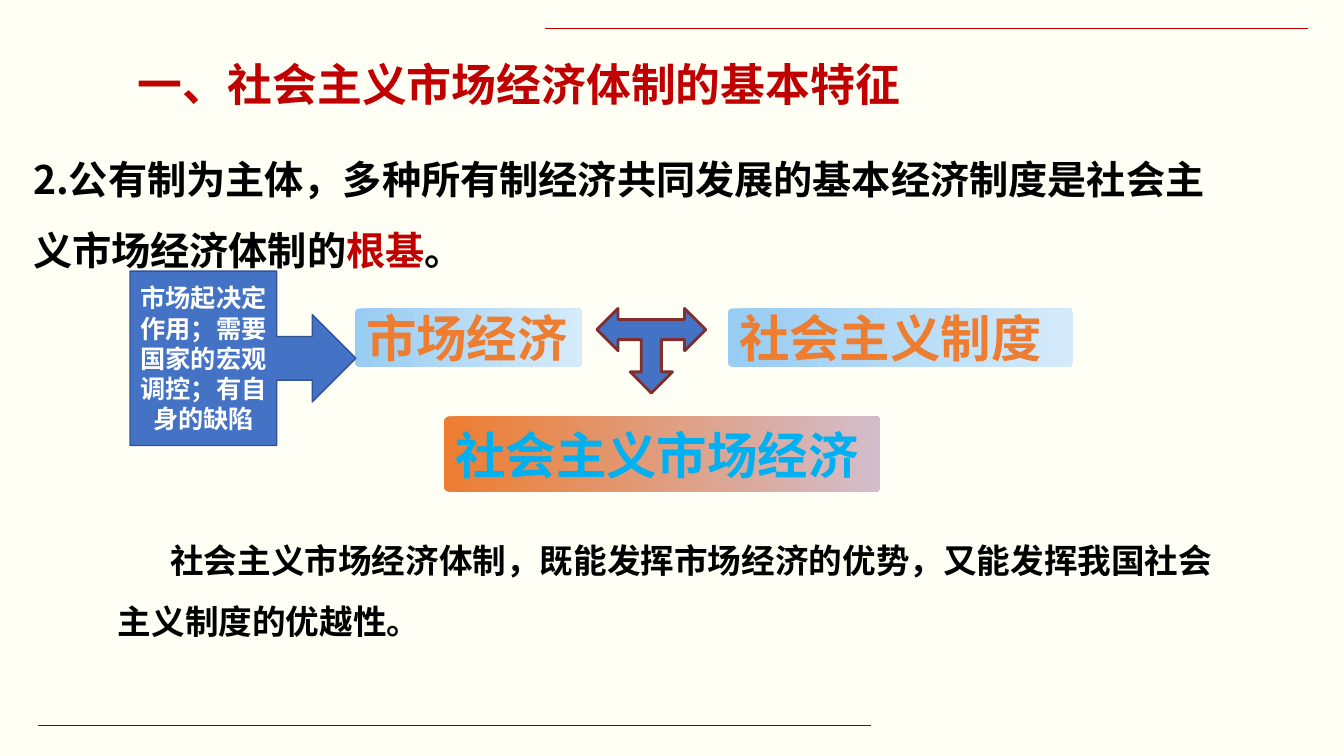
from lxml import etree
from pptx import Presentation
from pptx.dml.color import RGBColor
from pptx.enum.shapes import MSO_CONNECTOR, MSO_SHAPE
from pptx.enum.text import MSO_ANCHOR, MSO_AUTO_SIZE, PP_ALIGN
from pptx.oxml.ns import qn
from pptx.util import Inches, Pt

LINE = MSO_CONNECTOR.STRAIGHT
ROUND = MSO_SHAPE.ROUNDED_RECTANGLE
CALLOUT = MSO_SHAPE.RIGHT_ARROW_CALLOUT
MIDDLE, TOP = MSO_ANCHOR.MIDDLE, MSO_ANCHOR.TOP
LEFT, CENTER = PP_ALIGN.LEFT, PP_ALIGN.CENTER
GROW = MSO_AUTO_SIZE.SHAPE_TO_FIT_TEXT
CJK = "Noto Sans CJK SC"
RED, BLACK, BLUE = "C00000", "000000", "4472C4"
SKY = ("97CCF3", "D5EBFA")
SUNSET = ("ED7D31", "D3BDCB")


def color(value):
    """Turn a hex string into a colour."""
    return RGBColor.from_string(value)


def inches(box):
    """Turn a box in inches into lengths."""
    return [Inches(v) for v in box]


def write(shape, runs, size, font=CJK, align=LEFT, anchor=TOP, wrap=True, spacing=None):
    """Fill a shape with one bold paragraph of (text, colour) runs."""
    tf = shape.text_frame
    for name, value in dict(word_wrap=wrap, vertical_anchor=anchor).items():
        setattr(tf, name, value)
    p = tf.paragraphs[0]
    for name, value in dict(alignment=align, line_spacing=spacing).items():
        setattr(p, name, value)
    for text, tint in runs:
        r = p.add_run()
        r.text = text
        for name, value in dict(size=Pt(size), name=font, bold=True).items():
            setattr(r.font, name, value)
        r.font.color.rgb = color(tint)
        etree.SubElement(r.font._element, qn("a:ea"), typeface=CJK)
    return p


def outline(shape, fill, line, width):
    """Give a shape a plain fill and outline without shadow."""
    shape.shadow.inherit = False
    shape.fill.solid()
    shape.fill.fore_color.rgb = color(fill)
    shape.line.color.rgb = color(line)
    shape.line.width = Pt(width)


def rule(s, x1, x2, y, tint):
    """Draw a thin horizontal rule."""
    sp = s.shapes.add_connector(LINE, *inches((x1, y, x2, y)))
    sp.line.color.rgb = color(tint)
    sp.line.width = Pt(0.5)
    etree.SubElement(sp._element.spPr, qn("a:effectLst"))


def text_box(s, box, runs, size, indent=0, **style):
    """Place a text box that grows with its text."""
    sp = s.shapes.add_textbox(*inches(box))
    p = write(sp, runs, size, **style)
    sp.text_frame.auto_size = GROW
    if indent:
        p._p.get_or_add_pPr().set("indent", str(Inches(indent)))


def concept(s, box, text, tint, stops):
    """Place a rounded label with a left-to-right gradient."""
    sp = s.shapes.add_shape(ROUND, *inches(box))
    sp.adjustments[0] = 0.076
    sp.shadow.inherit = False
    sp.line.fill.background()
    sp.fill.gradient()
    sp.fill.gradient_angle = 0
    for stop, value in zip(sp.fill.gradient_stops, stops):
        stop.color.rgb = color(value)
    p = write(sp, [(text, tint)], 36, font="Arial", anchor=MIDDLE, wrap=False)
    before = etree.SubElement(p._p.get_or_add_pPr(), qn("a:spcBef"))
    etree.SubElement(before, qn("a:spcPct"), val="50000")


def three_way_arrow(s, box):
    """Draw an arrow pointing left, right and down, mirrored about its middle."""
    x, y, w, h = box
    mid, head, stem = x + w / 2, 0.21, 0.1
    half = [(w / 2 - head, 0), (w / 2, head), (w / 2 - head, 2 * head),
            (w / 2 - head, head + stem), (stem, head + stem),
            (stem, h - head), (head, h - head), (0, h)]
    half.insert(0, (w / 2 - head, head - stem))
    points = [(mid + dx, y + dy) for dx, dy in half]
    points += [(mid - dx, y + dy) for dx, dy in reversed(half[:-1])]
    points = [(Inches(px), Inches(py)) for px, py in points]
    builder = s.shapes.build_freeform(*points[0])
    builder.add_line_segments(points[1:], close=True)
    outline(builder.convert_to_shape(), BLUE, "822E2E", 2)


def callout(s, box, text):
    """Place the callout whose arrow points right."""
    sp = s.shapes.add_shape(CALLOUT, *inches(box))
    outline(sp, BLUE, "325491", 1)
    write(sp, [(text, "FFFFFF")], 18, align=CENTER, anchor=MIDDLE)


def diagram(s, x, y):
    """Show how market economy and socialist system join, from a top left corner."""
    top = y + 0.37
    concept(s, (x + 2.23, top, 2.25, 0.58), "市场经济", "ED7D31", SKY)
    concept(s, (x + 3.11, y + 1.44, 4.33, 0.75), "社会主义市场经济", "00B0F0", SUNSET)
    concept(s, (x + 5.93, top, 3.42, 0.58), "社会主义制度", "ED7D31", SKY)
    three_way_arrow(s, (x + 4.63, top, 1.08, 0.84))
    callout(s, (x, y, 2.24, 1.73), "市场起决定作用；需要国家的宏观调控；有自身的缺陷")


def main():
    """Build the slide and save it."""
    prs = Presentation()
    prs.slide_width, prs.slide_height = inches((13.33, 7.5))
    s = prs.slides.add_slide(prs.slide_layouts[6])
    s.background.fill.solid()
    s.background.fill.fore_color.rgb = color("FFFFF5")
    rule(s, 5.41, 12.97, 0.28, RED)
    rule(s, 0.38, 8.64, 7.2, "262626")
    text_box(s, (0.23, 1.26, 11.84, 1.5), [
        ("2.公有制为主体，多种所有制经济共同发展的基本经济制度是社会主义市场经济体制的", BLACK),
        ("根基", RED), ("。", BLACK)], 28, spacing=1.5)
    text_box(s, (1.27, 0.51, 7.83, 0.64),
             [("一、社会主义市场经济体制的基本特征", RED)], 32, wrap=False)
    text_box(s, (1.07, 5.11, 11.19, 1.31), [
        ("社会主义市场经济体制，既能发挥市场经济的优势，又能发挥我国社会主义制度的优越性。", BLACK)],
        24, indent=0.52, spacing=1.5)
    diagram(s, 1.29, 2.69)
    prs.save("out.pptx")


if __name__ == "__main__":
    main()
